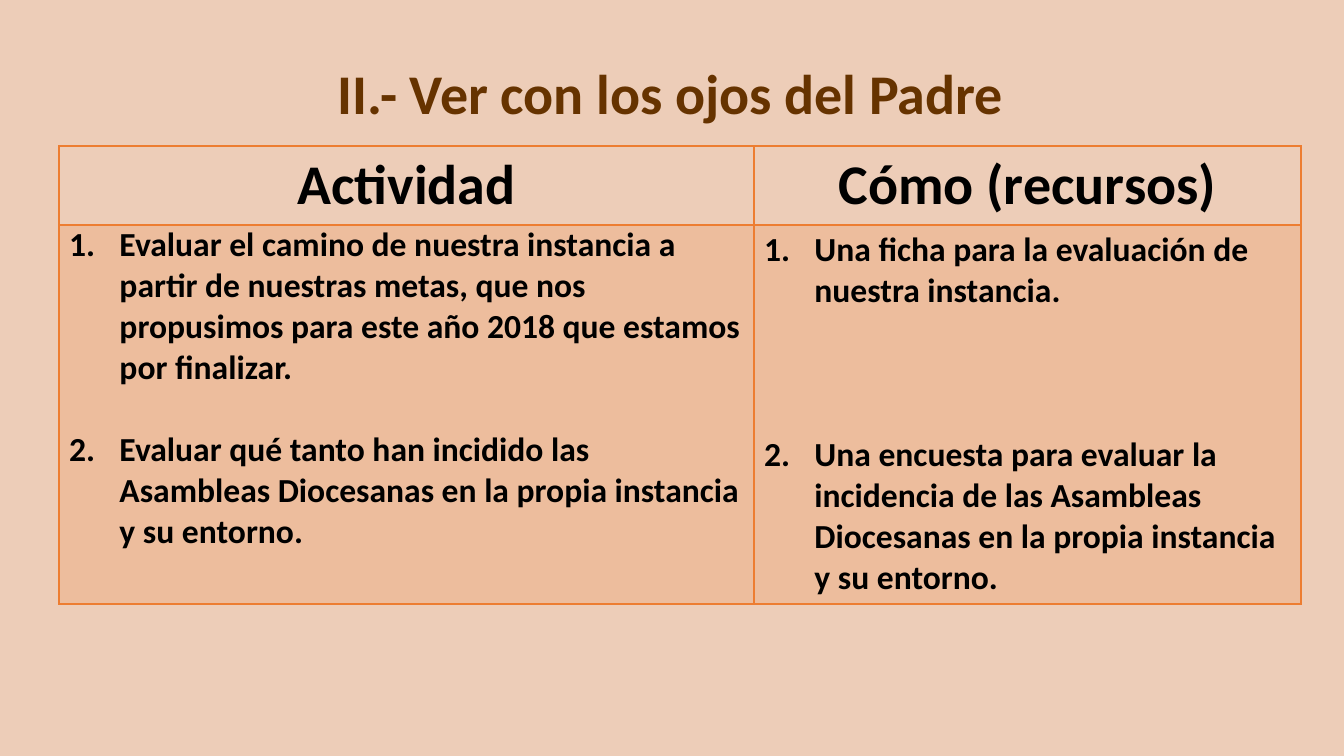
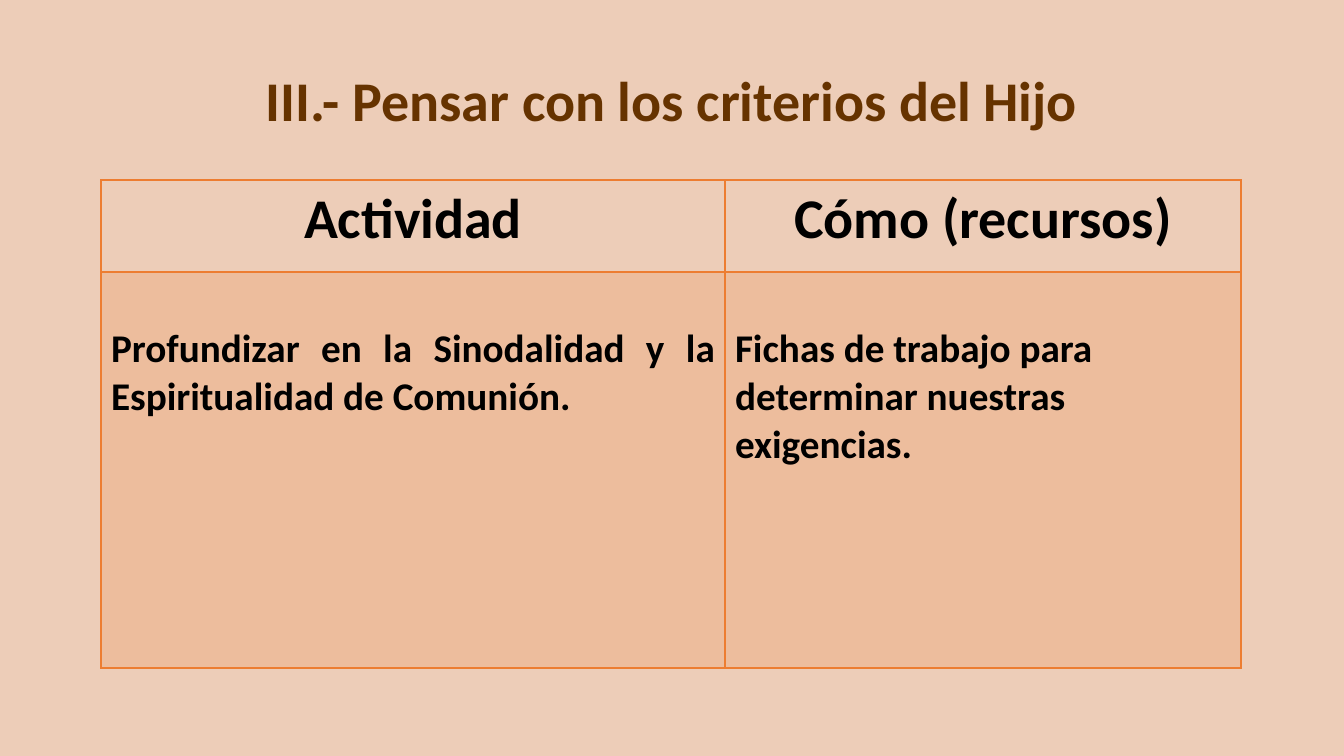
from lxml import etree
from pptx import Presentation
from pptx.dml.color import RGBColor
from pptx.enum.text import MSO_ANCHOR, PP_ALIGN
from pptx.oxml.ns import qn
from pptx.util import Emu, Pt

LEFT, CENTER, JUSTIFY = PP_ALIGN.LEFT, PP_ALIGN.CENTER, PP_ALIGN.JUSTIFY
MIDDLE = MSO_ANCHOR.MIDDLE
EMU_PER_PX = 914400 / 100.8
COLORS = {
    "background": "EDCDB8",
    "body": "EDBD9D",
    "border": "ED7D31",
    "title": "663300",
    "text": "000000",
}
HEADINGS = ["Actividad", "Cómo (recursos)"]
HEADING_FORMAT = {"size": 40, "align": CENTER}

SLIDES = [
    {
        "title": "II.- Ver con los ojos del Padre",
        "title_at": (91, 52),
        "table_at": (59, 146),
        "columns": (695, 547),
        "rows": (79, 379),
        "rule": 1,
        "size": 24,
        "numbered": True,
        "cells": [
            {
                "texts": [
                    "Evaluar el camino de nuestra instancia a partir de nuestras metas, que nos propusimos para este año 2018 que estamos por finalizar.",
                    "Evaluar qué tanto han incidido las Asambleas Diocesanas en la propia instancia y su entorno.",
                ],
                "align": LEFT, "gap": 41, "margins": {"margin_top": 0, "margin_bottom": 0},
            },
            {
                "texts": [
                    "Una ficha para la evaluación de nuestra instancia.",
                    "Una encuesta para evaluar la incidencia de las Asambleas Diocesanas en la propia instancia y su entorno.",
                ],
                "align": LEFT, "gap": 123, "margins": {},
            },
        ],
    },
    {
        "title": "III.- Pensar con los criterios del Hijo",
        "title_at": (92, 59),
        "table_at": (101, 180),
        "columns": (624, 516),
        "rows": (92, 396),
        "rule": 2,
        "size": 28,
        "numbered": False,
        "cells": [
            {
                "texts": ["Profundizar en la Sinodalidad y la Espiritualidad de Comunión."],
                "align": JUSTIFY, "gap": 0, "margins": {"margin_top": 53},
            },
            {
                "texts": ["Fichas de trabajo para determinar nuestras exigencias."],
                "align": LEFT, "gap": 0, "margins": {"margin_top": 53},
            },
        ],
    },
]


def px(length):
    return Emu(round(length * EMU_PER_PX))


def write(para, text, size, align, color="text"):
    para.alignment = align
    span = para.add_run()
    span.text = text
    for name, value in {"name": "Calibri", "size": Pt(size), "bold": True}.items():
        setattr(span.font, name, value)
    span.font.color.rgb = RGBColor.from_string(COLORS[color])


deck = Presentation()
deck.slide_width, deck.slide_height = px(1344), px(756)

for content in SLIDES:
    page = deck.slides.add_slide(deck.slide_layouts[6])
    page.background.fill.solid()
    page.background.fill.fore_color.rgb = RGBColor.from_string(COLORS["background"])

    title_left, title_top = content["title_at"]
    box = page.shapes.add_textbox(px(title_left), px(title_top), px(1159), px(88))
    box.text_frame.word_wrap = True
    box.text_frame.vertical_anchor = MIDDLE
    title_para = box.text_frame.paragraphs[0]
    title_para.line_spacing = 0.9
    write(title_para, content["title"], color="title", **HEADING_FORMAT)

    columns, rows = content["columns"], content["rows"]
    table_left, table_top = content["table_at"]
    table = page.shapes.add_table(
        2, 2, px(table_left), px(table_top), px(sum(columns)), px(sum(rows))
    ).table
    table.first_row = table.horz_banding = False
    for column, width in zip(table.columns, columns):
        column.width = px(width)
    for row, height in zip(table.rows, rows):
        row.height = px(height)

    for index, cell in enumerate(table.iter_cells()):
        is_heading = index < 2
        widths = {"lnL": 1, "lnR": 1, "lnT": 1, "lnB": 1}
        widths["lnB" if is_heading else "lnT"] = content["rule"]
        properties = cell._tc.get_or_add_tcPr()
        for side, width in widths.items():
            line = etree.SubElement(properties, qn("a:" + side), w=str(Pt(width)))
            fill = etree.SubElement(line, qn("a:solidFill"))
            etree.SubElement(fill, qn("a:srgbClr"), val=COLORS["border"])

        if is_heading:
            cell.fill.background()
            write(cell.text_frame.paragraphs[0], HEADINGS[index], **HEADING_FORMAT)
            continue

        cell.fill.solid()
        cell.fill.fore_color.rgb = RGBColor.from_string(COLORS["body"])
        entry = content["cells"][index - 2]
        for name, value in entry["margins"].items():
            setattr(cell, name, px(value))
        for number, text in enumerate(entry["texts"]):
            frame = cell.text_frame
            para = frame.add_paragraph() if number else frame.paragraphs[0]
            write(para, text, content["size"], entry["align"])
            if number:
                para.space_before = px(entry["gap"])
            if content["numbered"]:
                layout = para._p.get_or_add_pPr()
                layout.set("marL", str(Pt(36)))
                layout.set("indent", str(-Pt(36)))
                etree.SubElement(layout, qn("a:buAutoNum"), type="arabicPeriod")

deck.save("out.pptx")
